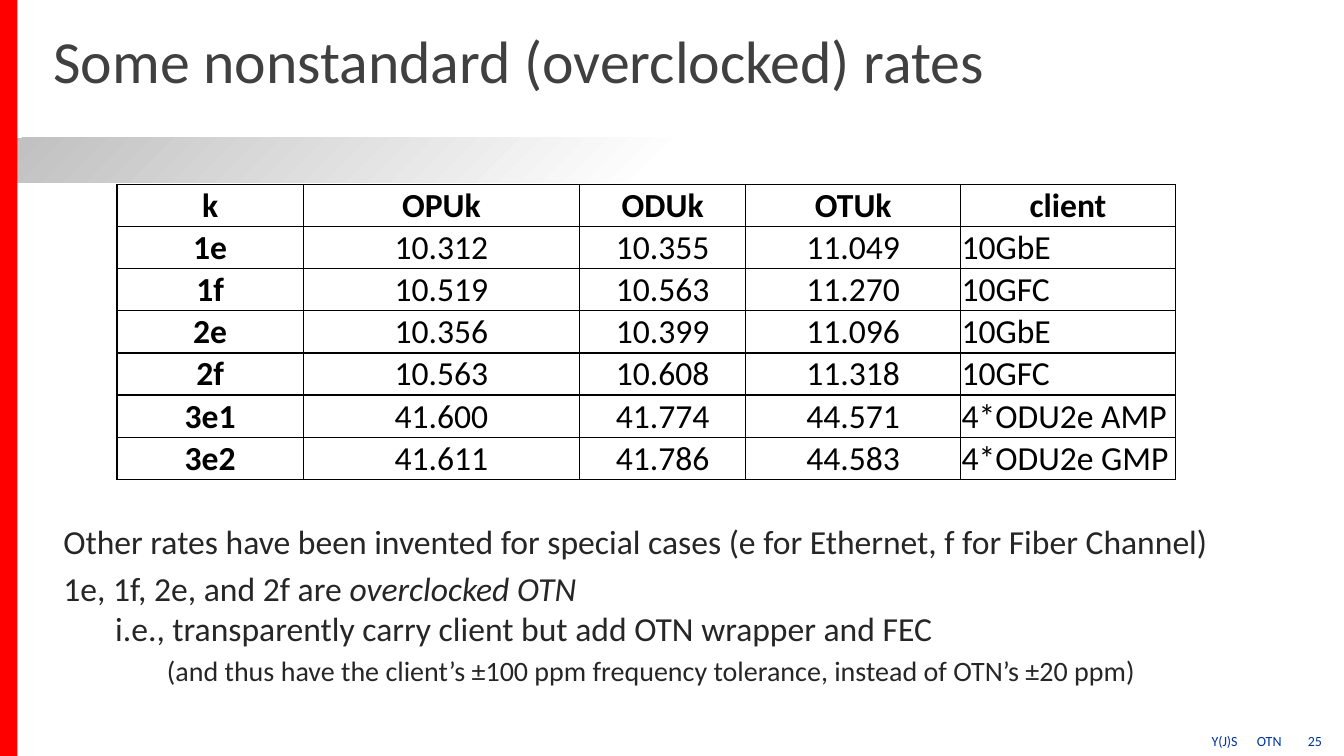
import lxml.etree
import pptx
import pptx.dml.color
import pptx.enum.shapes
import pptx.enum.text
import pptx.oxml.ns
import pptx.util

Pt = pptx.util.Pt
ALIGN = pptx.enum.text.PP_ALIGN
ANCHOR = pptx.enum.text.MSO_ANCHOR
qn = pptx.oxml.ns.qn

COLOURS = {
    "accent": "FF0000",
    "band": "BFBFBF",
    "paper": "FFFFFF",
    "title": "404040",
    "body": "262626",
    "table": "000000",
    "footer": "003399",
}
RATES = [
    ["k", "OPUk", "ODUk", "OTUk", "client"],
    ["1e", "10.312", "10.355", "11.049", "10GbE"],
    ["1f", "10.519", "10.563", "11.270", "10GFC"],
    ["2e", "10.356", "10.399", "11.096", "10GbE"],
    ["2f", "10.563", "10.608", "11.318", "10GFC"],
    ["3e1", "41.600", "41.774", "44.571", "4*ODU2e AMP"],
    ["3e2", "41.611", "41.786", "44.583", "4*ODU2e GMP"],
]
COLUMN_WIDTHS = [133.2, 197.3, 118.8, 153.4, 153.4]
ROW_HEIGHT = 30.1
INDENT = 37


def colour(name):
    return pptx.dml.color.RGBColor.from_string(COLOURS[name])


class SlideBuilder:
    font_name = "Calibri"

    def __init__(self, slide):
        self.slide = slide

    def style(self, paragraph, size, colour_name, bold=False):
        for run in paragraph.runs:
            run.font.name = self.font_name
            run.font.size = Pt(size)
            run.font.bold = bold
            run.font.color.rgb = colour(colour_name)

    def rectangle(self, left, top, width, height):
        shape = self.slide.shapes.add_shape(
            pptx.enum.shapes.MSO_SHAPE.RECTANGLE,
            Pt(left), Pt(top), Pt(width), Pt(height))
        shape.shadow.inherit = False
        shape.line.fill.background()
        return shape

    def solid_bar(self, left, top, width, height, colour_name):
        fill = self.rectangle(left, top, width, height).fill
        fill.solid()
        fill.fore_color.rgb = colour(colour_name)

    def fading_band(self, left, top, width, height):
        """Draw a band that fades into the paper halfway across."""
        fill = self.rectangle(left, top, width, height).fill
        fill.gradient()
        fill.gradient_angle = 315
        stops = zip(fill.gradient_stops, (0, 0.5), ("band", "paper"))
        for stop, position, name in stops:
            stop.position = position
            stop.color.rgb = colour(name)

    def text_frame(self, left, top, width, height, insets=(0, 0), anchor=ANCHOR.TOP):
        """Add a text box; insets are horizontal and vertical."""
        frame = self.slide.shapes.add_textbox(
            Pt(left), Pt(top), Pt(width), Pt(height)).text_frame
        frame.word_wrap = True
        frame.vertical_anchor = anchor
        frame.margin_left = frame.margin_right = Pt(insets[0])
        frame.margin_top = frame.margin_bottom = Pt(insets[1])
        return frame

    def title(self, text):
        frame = self.text_frame(38.2, 15.8, 726.5, 61.9, anchor=ANCHOR.MIDDLE)
        frame.text = text
        frame.paragraphs[0].line_spacing = 0.85
        self.style(frame.paragraphs[0], 42.7, "title")

    def footer(self, left, width, text, align=ALIGN.LEFT, tab=None):
        frame = self.text_frame(left, 518, width, 21.6, insets=(9.4, 5))
        frame.text = text
        paragraph = frame.paragraphs[0]
        paragraph.alignment = align
        if tab:
            tabs = lxml.etree.SubElement(
                paragraph._p.get_or_add_pPr(), qn("a:tabLst"))
            lxml.etree.SubElement(
                tabs, qn("a:tab"), pos=str(Pt(tab)), algn="l")
        self.style(paragraph, 10, "footer")

    def body(self, lines):
        """Write lines of (runs, indent level, size, space before); odd runs are italic."""
        frame = self.text_frame(38.2, 368.6, 890.6, 141.1, insets=(7.2, 3.6))
        for index, (texts, level, size, space) in enumerate(lines):
            paragraph = frame.add_paragraph() if index else frame.paragraphs[0]
            paragraph.space_before = Pt(space)
            paragraph._p.get_or_add_pPr().set("marL", str(Pt(level * INDENT)))
            for position, text in enumerate(texts):
                run = paragraph.add_run()
                run.text = text
                run.font.italic = position % 2 == 1
            self.style(paragraph, size, "body")

    def border(self, cell):
        properties = cell._tc.get_or_add_tcPr()
        for index, side in enumerate(("lnL", "lnR", "lnT", "lnB")):
            line = lxml.etree.Element(qn("a:" + side), w=str(Pt(1)))
            fill = lxml.etree.SubElement(line, qn("a:solidFill"))
            lxml.etree.SubElement(fill, qn("a:srgbClr"), val=COLOURS["table"])
            properties.insert(index, line)

    def table(self, left, top, rows, widths, row_height):
        table = self.slide.shapes.add_table(
            len(rows), len(widths), Pt(left), Pt(top),
            Pt(sum(widths)), Pt(row_height * len(rows))).table
        for column, width in zip(table.columns, widths):
            column.width = Pt(width)
        for row_index, values in enumerate(rows):
            table.rows[row_index].height = Pt(row_height)
            for column_index, value in enumerate(values):
                cell = table.cell(row_index, column_index)
                cell.text_frame.text = value
                cell.vertical_anchor = ANCHOR.BOTTOM
                cell.margin_left = cell.margin_right = cell.margin_top = Pt(0.75)
                cell.margin_bottom = Pt(0)
                cell.fill.background()
                self.border(cell)
                is_client = row_index > 0 and column_index == len(widths) - 1
                paragraph = cell.text_frame.paragraphs[0]
                paragraph.alignment = ALIGN.LEFT if is_client else ALIGN.CENTER
                self.style(paragraph, 24, "table",
                           bold=row_index == 0 or column_index == 0)


def main():
    presentation = pptx.Presentation()
    presentation.slide_width = Pt(960)
    presentation.slide_height = Pt(540)
    slide = presentation.slides.add_slide(presentation.slide_layouts[6])
    builder = SlideBuilder(slide)

    builder.fading_band(0, 98.4, 960, 32)
    builder.solid_bar(0, 0, 12.4, 540, "accent")
    builder.footer(919.4, 39.6, "25", align=ALIGN.CENTER)
    builder.footer(856, 88, "Y(J)S\tOTN", tab=32.4)
    builder.title("Some nonstandard (overclocked) rates")
    builder.body([
        (["Other rates have been invented for special cases "
          "(e for Ethernet, f for Fiber Channel)"], 0, 24, 0),
        (["1e, 1f, 2e, and 2f are ", "overclocked OTN"], 0, 24, 4.8),
        (["i.e., transparently carry client but add OTN wrapper and FEC"], 1, 24, 0),
        (["(and thus have the client’s ±100 ppm frequency tolerance, "
          "instead of OTN’s ±20 ppm)"], 2, 20, 3.8),
    ])
    builder.table(83.5, 131.8, RATES, COLUMN_WIDTHS, ROW_HEIGHT)
    presentation.save("out.pptx")


if __name__ == "__main__":
    main()
